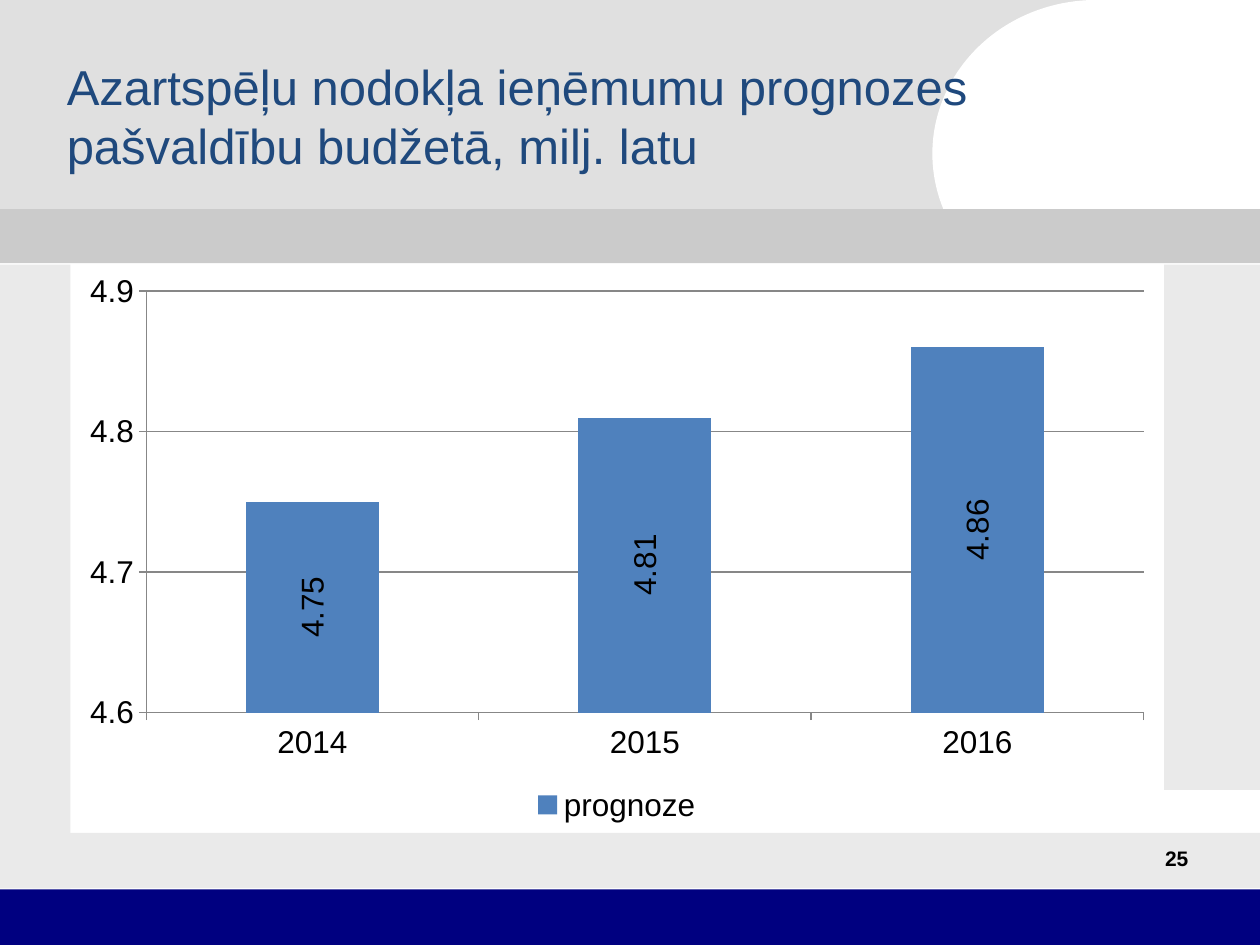
from lxml import etree
from pptx import Presentation
from pptx.chart.data import CategoryChartData
from pptx.dml.color import RGBColor
from pptx.enum.chart import XL_CHART_TYPE as ChartType
from pptx.enum.chart import XL_LABEL_POSITION as LabelPosition
from pptx.enum.chart import XL_LEGEND_POSITION as LegendPosition
from pptx.enum.chart import XL_TICK_MARK as TickMark
from pptx.enum.shapes import MSO_SHAPE as Shape
from pptx.enum.text import MSO_ANCHOR as Anchor
from pptx.enum.text import MSO_AUTO_SIZE as AutoSize
from pptx.enum.text import PP_ALIGN as Align
from pptx.util import Inches, Pt

THEME = {
    "font": "Arial",
    "title_size": Pt(28), "chart_size": Pt(18), "number_size": Pt(12),
    "title": RGBColor.from_string("1F497D"),
    "text": RGBColor.from_string("000000"),
    "header": RGBColor.from_string("E0E0E0"),
    "white": RGBColor.from_string("FFFFFF"),
    "margin": RGBColor.from_string("EAEAEA"),
    "band": RGBColor.from_string("CBCBCB"),
    "footer": RGBColor.from_string("000080"),
    "bar": RGBColor.from_string("4F81BD"),
    "axis": RGBColor.from_string("878787"),
}


def style_font(font, size, color, bold=False):
    font.name = THEME["font"]
    font.size = THEME[size]
    font.bold = bold
    font.color.rgb = THEME[color]


prs = Presentation()
prs.slide_width, prs.slide_height = Inches(10), Inches(7.5)
slide = prs.slides.add_slide(prs.slide_layouts[5])
title = slide.shapes.title

# Background panels, back to front
panels = [
    (Shape.RECTANGLE, "header", 0, 0, 9.09, 1.69),
    (Shape.OVAL, "white", 7.4, 0, 2.6, 2.44),
    (Shape.RECTANGLE, "margin", 0, 2.1, 0.56, 4.95),
    (Shape.RECTANGLE, "margin", 0.26, 6.61, 9.74, 0.44),
    (Shape.RECTANGLE, "footer", 0, 7.06, 10, 0.44),
    (Shape.RECTANGLE, "margin", 9.24, 2.1, 0.76, 4.17),
    (Shape.RECTANGLE, "white", 8.62, 0, 1.38, 2.02),
    (Shape.RECTANGLE, "band", 0, 1.66, 10, 0.43),
]
for outline, color, *box in panels:
    panel = slide.shapes.add_shape(outline, *map(Inches, box))
    panel.shadow.inherit = False
    panel.fill.solid()
    panel.fill.fore_color.rgb = THEME[color]
    panel.line.fill.background()

# Title, brought in front of the panels
slide.shapes._spTree.append(title._element)
title.left, title.top = Inches(0.43), Inches(0.29)
title.width, title.height = Inches(7.4), Inches(1.25)
title.text_frame.auto_size = AutoSize.NONE
title.text_frame.word_wrap = True
title.text_frame.vertical_anchor = Anchor.MIDDLE
title.text_frame.text = "Azartspēļu nodokļa ieņēmumu prognozes pašvaldību budžetā, milj. latu"
heading = title.text_frame.paragraphs[0]
heading.alignment = Align.LEFT
style_font(heading.runs[0].font, "title_size", "title")

# Forecast chart
forecast = CategoryChartData(number_format="General")
forecast.categories = ["2014", "2015", "2016"]
forecast.add_series("prognoze", [4.75, 4.81, 4.86])
chart = slide.shapes.add_chart(
    ChartType.COLUMN_CLUSTERED, Inches(0.54), Inches(2.08), Inches(8.71), Inches(4.5), forecast
).chart
style_font(chart.font, "chart_size", "text")
chart.has_title = False
chart.has_legend = True
chart.legend.position = LegendPosition.BOTTOM
chart.legend.include_in_layout = False

years, amounts = chart.category_axis, chart.value_axis
amounts.minimum_scale, amounts.maximum_scale, amounts.major_unit = 4.6, 4.9, 0.1
amounts.has_major_gridlines = True
amounts.tick_labels.number_format = "0.0"
amounts.tick_labels.number_format_is_linked = False
for axis in (years, amounts):
    axis.major_tick_mark = TickMark.OUTSIDE
    axis.minor_tick_mark = TickMark.NONE
for line in (years.format.line, amounts.format.line, amounts.major_gridlines.format.line):
    line.color.rgb = THEME["axis"]
    line.width = Pt(0.75)

plot = chart.plots[0]
plot.gap_width = 150
plot.vary_by_categories = False
bars = plot.series[0]
bars.format.fill.solid()
bars.format.fill.fore_color.rgb = THEME["bar"]
labels = bars.data_labels
labels.show_value = True
labels.position = LabelPosition.CENTER
labels.number_format = "#,##0.00"
labels.number_format_is_linked = False
style_font(labels.font, "chart_size", "text")
label_body = labels._element.find(".//{*}bodyPr")
label_body.set("rot", "-5400000")
label_body.set("vert", "horz")

# Slide number
number_box = slide.shapes.add_textbox(Inches(7.27), Inches(6.66), Inches(2.26), Inches(0.5))
number_box.text_frame.word_wrap = True
number_box.text_frame.text = "25"
number = number_box.text_frame.paragraphs[0]
number.alignment = Align.RIGHT
style_font(number.runs[0].font, "number_size", "text", bold=True)

prs.save("out.pptx")
